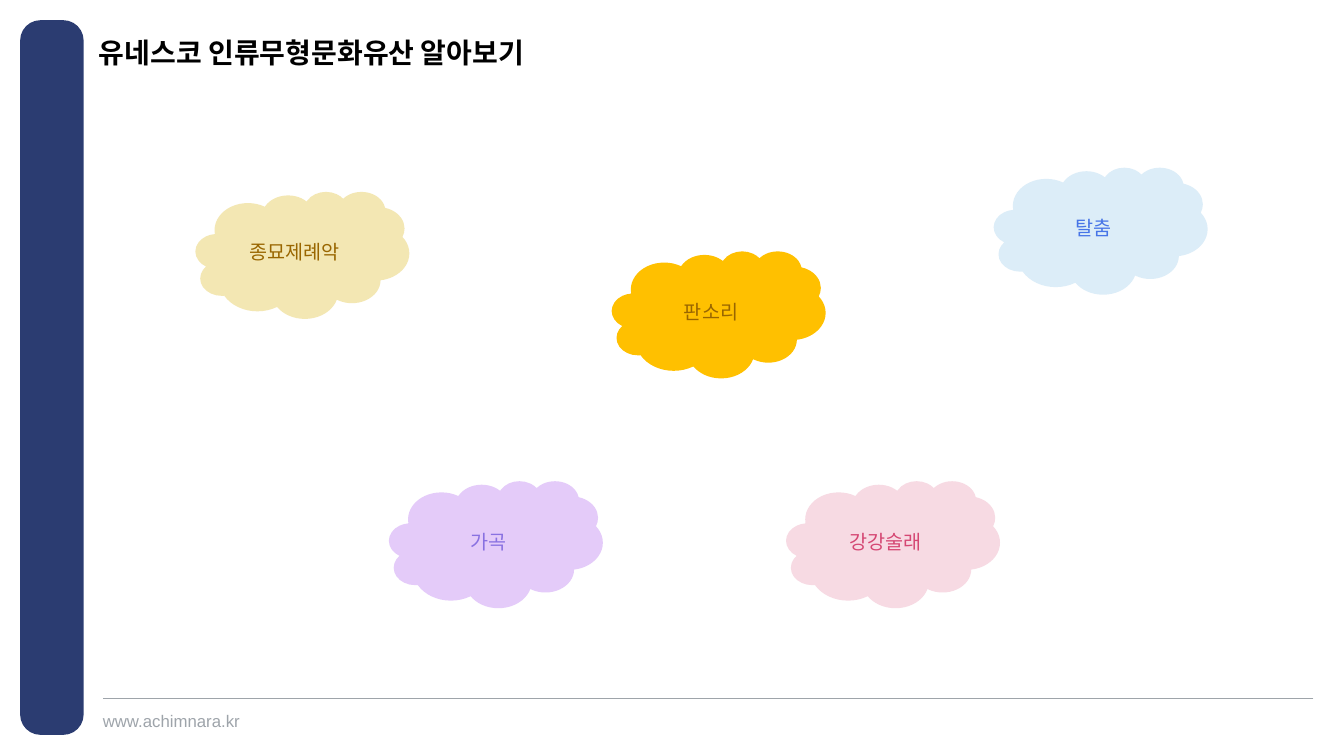
from dataclasses import dataclass

import pptx
import pptx.dml.color
import pptx.enum.shapes
import pptx.enum.text
import pptx.oxml
import pptx.oxml.ns
import pptx.presentation
import pptx.shapes.autoshape
import pptx.slide
import pptx.text.text
import pptx.util
from pptx.dml.color import RGBColor

NAVY = RGBColor(0x2B, 0x3C, 0x71)
GREY = RGBColor(0x9E, 0xA4, 0xAA)
BLACK = RGBColor(0x00, 0x00, 0x00)
SAND = RGBColor(0xF3, 0xE7, 0xB3)
AMBER = RGBColor(0xFF, 0xC0, 0x00)
LILAC = RGBColor(0xE4, 0xCB, 0xF9)
PINK = RGBColor(0xF7, 0xDA, 0xE3)
SKY = RGBColor(0xDC, 0xED, 0xF8)
BROWN = RGBColor(0x99, 0x66, 0x00)
VIOLET = RGBColor(0x89, 0x71, 0xE1)
CRIMSON = RGBColor(0xD5, 0x47, 0x73)
BLUE = RGBColor(0x47, 0x75, 0xE7)

LATIN_FONT = "Arial"
KOREAN_FONT = "Noto Sans CJK KR"
CLOUD_WIDTH = 152.64
CLOUD_HEIGHT = 90.72


@dataclass(frozen=True)
class Heritage:
    name: str
    left: float
    top: float
    fill: RGBColor
    text_color: RGBColor


@dataclass(frozen=True)
class Label:
    text: str
    left: float
    top: float
    width: float
    height: float
    size: float
    color: RGBColor
    bold: bool = False
    line_spacing: float = 1.0


HERITAGES = [
    Heritage("종묘제례악", 139.68, 136.8, SAND, BROWN),
    Heritage("판소리", 437.04, 179.28, AMBER, BROWN),
    Heritage("가곡", 277.92, 343.44, LILAC, VIOLET),
    Heritage("강강술래", 561.6, 343.44, PINK, CRIMSON),
    Heritage("탈춤", 709.92, 119.52, SKY, BLUE),
]

LABELS = [
    Label("www.achimnara.kr", 73.44, 507.6, 108, 14.4, 12, GREY),
    Label("유네스코 인류무형문화유산 알아보기", 70.56, 28.08, 566.64, 20.16, 20, BLACK,
          bold=True, line_spacing=0.9),
]


def style_paragraph(paragraph: pptx.text.text._Paragraph, latin_font: str,
                    size: float, color: RGBColor, bold: bool = False) -> None:
    font = paragraph.font
    font.name = latin_font
    font.size = pptx.util.Pt(size)
    font.bold = bold
    font.color.rgb = color
    qn = pptx.oxml.ns.qn
    latin = paragraph._p.pPr.find(qn("a:defRPr")).find(qn("a:latin"))
    latin.addnext(pptx.oxml.parse_xml(
        f'<a:ea {pptx.oxml.ns.nsdecls("a")} typeface="{KOREAN_FONT}"/>'))


def add_filled_shape(slide: pptx.slide.Slide, kind: pptx.enum.shapes.MSO_SHAPE,
                     left: float, top: float, width: float, height: float,
                     fill: RGBColor) -> pptx.shapes.autoshape.Shape:
    shape = slide.shapes.add_shape(
        kind, pptx.util.Pt(left), pptx.util.Pt(top),
        pptx.util.Pt(width), pptx.util.Pt(height))
    shape.shadow.inherit = False
    shape.fill.solid()
    shape.fill.fore_color.rgb = fill
    shape.line.fill.background()
    return shape


def add_footer_rule(slide: pptx.slide.Slide) -> None:
    height = pptx.util.Pt(498.96)
    rule = slide.shapes.add_connector(
        pptx.enum.shapes.MSO_CONNECTOR.STRAIGHT,
        pptx.util.Pt(938.16), height, pptx.util.Pt(73.44), height)
    rule.line.color.rgb = GREY
    rule.line.width = pptx.util.Pt(0.5)
    rule._element.spPr.append(pptx.oxml.parse_xml(
        f'<a:effectLst {pptx.oxml.ns.nsdecls("a")}/>'))


def add_label(slide: pptx.slide.Slide, label: Label) -> None:
    box = slide.shapes.add_textbox(
        pptx.util.Pt(label.left), pptx.util.Pt(label.top),
        pptx.util.Pt(label.width), pptx.util.Pt(label.height))
    frame = box.text_frame
    frame.word_wrap = True
    frame.margin_left = frame.margin_right = 0
    frame.margin_top = frame.margin_bottom = 0
    paragraph = frame.paragraphs[0]
    paragraph.text = label.text
    paragraph.line_spacing = label.line_spacing
    style_paragraph(paragraph, LATIN_FONT, label.size, label.color, label.bold)


def add_heritage_cloud(slide: pptx.slide.Slide, heritage: Heritage) -> None:
    cloud = add_filled_shape(
        slide, pptx.enum.shapes.MSO_SHAPE.CLOUD, heritage.left, heritage.top,
        CLOUD_WIDTH, CLOUD_HEIGHT, heritage.fill)
    frame = cloud.text_frame
    frame.vertical_anchor = pptx.enum.text.MSO_ANCHOR.MIDDLE
    paragraph = frame.paragraphs[0]
    paragraph.text = heritage.name
    paragraph.alignment = pptx.enum.text.PP_ALIGN.CENTER
    style_paragraph(paragraph, KOREAN_FONT, 14, heritage.text_color)


def main() -> None:
    presentation = pptx.Presentation()
    presentation.slide_width = pptx.util.Pt(960)
    presentation.slide_height = pptx.util.Pt(540)
    slide = presentation.slides.add_slide(presentation.slide_layouts[6])

    sidebar = add_filled_shape(
        slide, pptx.enum.shapes.MSO_SHAPE.ROUNDED_RECTANGLE,
        14.4, 14.4, 45.36, 510.48, NAVY)
    sidebar.adjustments[0] = 0.32
    add_footer_rule(slide)
    for label in LABELS:
        add_label(slide, label)
    for heritage in HERITAGES:
        add_heritage_cloud(slide, heritage)

    presentation.save("out.pptx")


if __name__ == "__main__":
    main()
